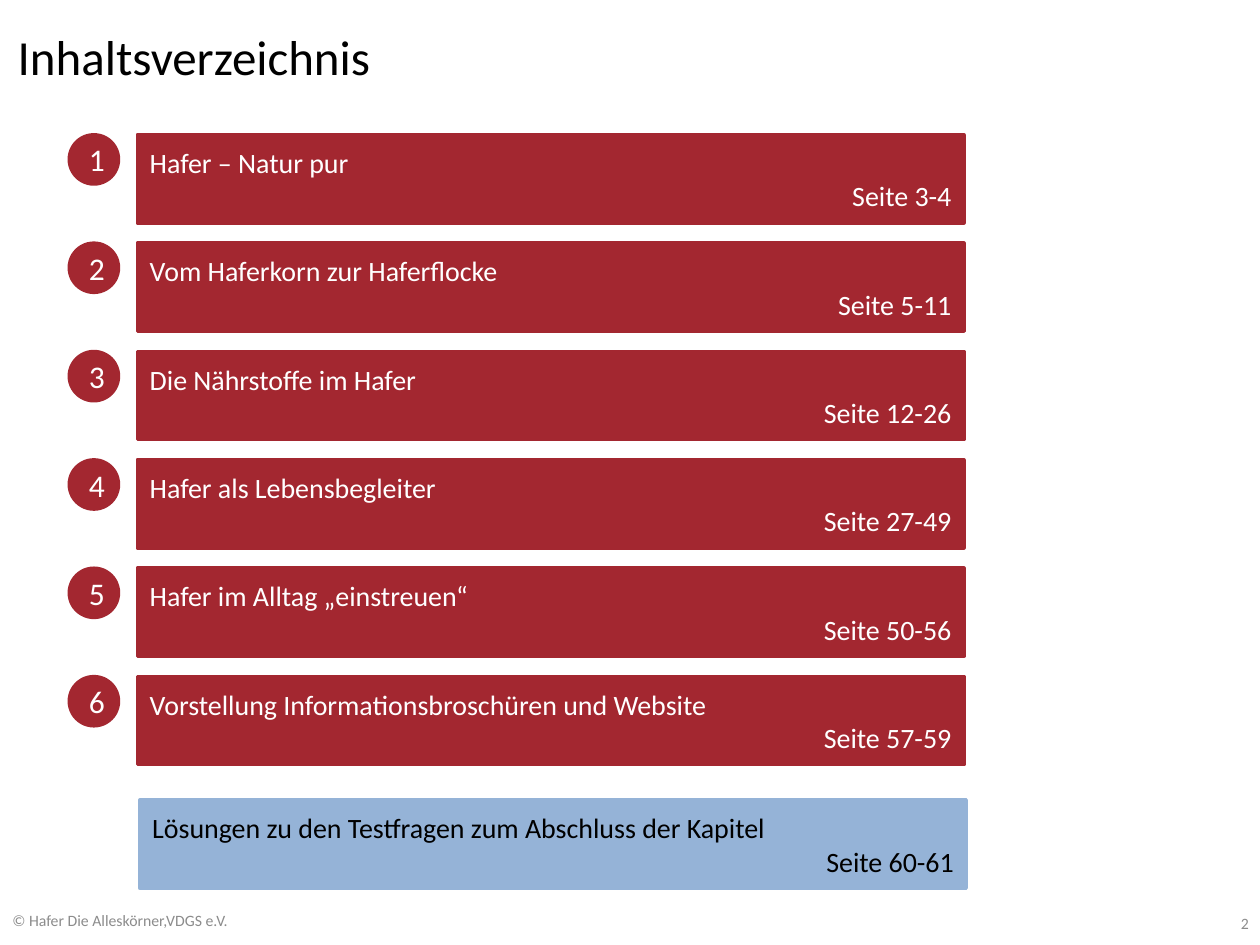
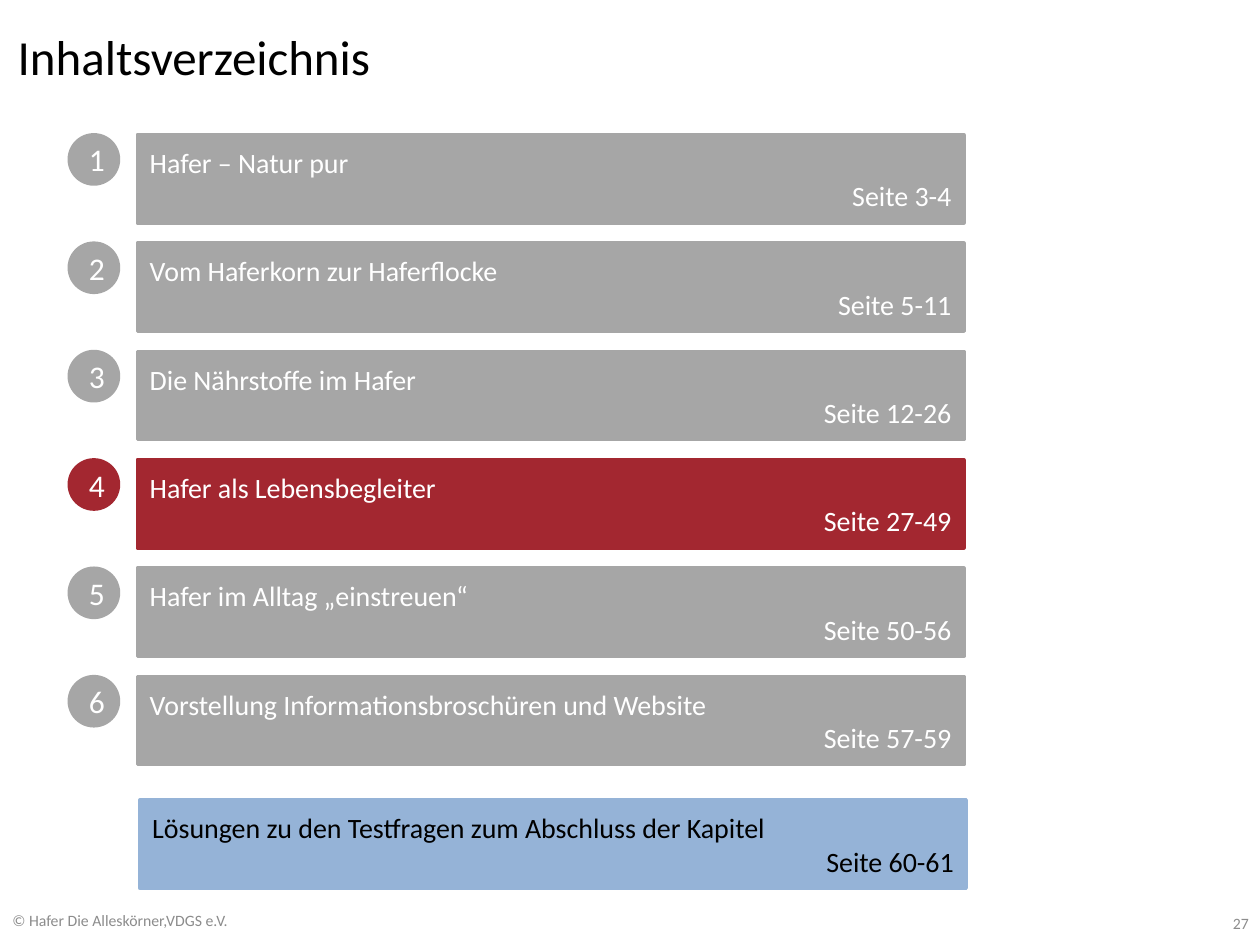
from typing import NamedTuple

from pptx import Presentation
from pptx.dml.color import RGBColor
from pptx.enum.shapes import MSO_SHAPE
from pptx.enum.text import MSO_ANCHOR, PP_ALIGN
from pptx.util import Emu, Pt

# Shared style
EMU_PER_PX = 9144  # 100 px to the inch
FONT = "Calibri"
RED, GREY, BLUE = "A32730", "A6A6A6", "95B3D7"
BLACK, WHITE, FOOTER_GREY = "000000", "FFFFFF", "8C8C8C"
TITLE = "Inhaltsverzeichnis"
COPYRIGHT = "© Hafer Die Alleskörner,VDGS e.V."

# Grid of the contents list
FIRST_TOP, ROW_PITCH = 107, 86
BAR_LEFT, BAR_WIDTH, BAR_HEIGHT = 109, 656, 70
CIRCLE_LEFT, CIRCLE_SIZE = 55, 39


class Box(NamedTuple):
    left: int
    top: int
    width: int
    height: int


class Chapter(NamedTuple):
    heading: str
    pages: str


class ContentsSlide(NamedTuple):
    page_number: int
    active_chapters: tuple[int, ...]


CHAPTERS = [
    Chapter("Hafer – Natur pur", "Seite 3-4"),
    Chapter("Vom Haferkorn zur Haferflocke", "Seite 5-11"),
    Chapter("Die Nährstoffe im Hafer", "Seite 12-26"),
    Chapter("Hafer als Lebensbegleiter", "Seite 27-49"),
    Chapter("Hafer im Alltag „einstreuen“", "Seite 50-56"),
    Chapter("Vorstellung Informationsbroschüren und Website", "Seite 57-59"),
]
SOLUTIONS = Chapter("Lösungen zu den Testfragen zum Abschluss der Kapitel", "Seite 60-61")
SLIDES = [ContentsSlide(2, (1, 2, 3, 4, 5, 6)), ContentsSlide(27, (4,))]


def px(length: int) -> Emu:
    return Emu(length * EMU_PER_PX)


def color(hex_code: str) -> RGBColor:
    return RGBColor.from_string(hex_code)


def write_text(shape, lines: list[str], alignments: list, size: int, font_color: str) -> None:
    text_frame = shape.text_frame
    text_frame.text = "\n".join(lines)
    text_frame.word_wrap = True
    text_frame.vertical_anchor = MSO_ANCHOR.MIDDLE
    for paragraph, alignment in zip(text_frame.paragraphs, alignments):
        paragraph.alignment = alignment
        for run in paragraph.runs:
            run.font.name = FONT
            run.font.size = Pt(size)
            run.font.color.rgb = color(font_color)


def add_filled_shape(slide, kind: MSO_SHAPE, box: Box, fill: str):
    shape = slide.shapes.add_shape(kind, *map(px, box))
    shape.shadow.inherit = False
    shape.fill.solid()
    shape.fill.fore_color.rgb = color(fill)
    shape.line.color.rgb = color(fill)
    shape.line.width = Pt(2)
    return shape


def add_bar(slide, chapter: Chapter, left: int, top: int, fill: str, font_color: str) -> None:
    bar = add_filled_shape(slide, MSO_SHAPE.RECTANGLE, Box(left, top, BAR_WIDTH, BAR_HEIGHT), fill)
    write_text(bar, list(chapter), [PP_ALIGN.LEFT, PP_ALIGN.RIGHT], 16, font_color)


def add_number(slide, number: int, top: int, fill: str) -> None:
    box = Box(CIRCLE_LEFT, top, CIRCLE_SIZE, CIRCLE_SIZE)
    circle = add_filled_shape(slide, MSO_SHAPE.OVAL, box, fill)
    write_text(circle, [str(number)], [PP_ALIGN.CENTER], 18, WHITE)


def add_footer_text(slide, text: str, box: Box, alignment: PP_ALIGN) -> None:
    text_box = slide.shapes.add_textbox(*map(px, box))
    write_text(text_box, [text], [alignment], 9, FOOTER_GREY)


def add_title(slide) -> None:
    title = slide.shapes.title
    title.left, title.top, title.width, title.height = map(px, Box(4, 5, 900, 78))
    write_text(title, [TITLE], [PP_ALIGN.LEFT], 28, BLACK)


def build_slide(presentation, contents: ContentsSlide) -> None:
    slide = presentation.slides.add_slide(presentation.slide_layouts[5])
    add_title(slide)

    # Numbered chapters, inactive ones in grey
    for number, chapter in enumerate(CHAPTERS, start=1):
        top = FIRST_TOP + (number - 1) * ROW_PITCH
        fill = RED if number in contents.active_chapters else GREY
        add_number(slide, number, top, fill)
        add_bar(slide, chapter, BAR_LEFT, top, fill, WHITE)

    # Solutions bar and footer
    add_bar(slide, SOLUTIONS, BAR_LEFT + 2, 635, BLUE, BLACK)
    add_footer_text(slide, COPYRIGHT, Box(0, 710, 317, 40), PP_ALIGN.LEFT)
    add_footer_text(slide, str(contents.page_number), Box(768, 713, 233, 40), PP_ALIGN.RIGHT)


def main() -> None:
    presentation = Presentation()
    presentation.slide_width, presentation.slide_height = px(1000), px(750)
    for contents in SLIDES:
        build_slide(presentation, contents)
    presentation.save("out.pptx")


if __name__ == "__main__":
    main()
